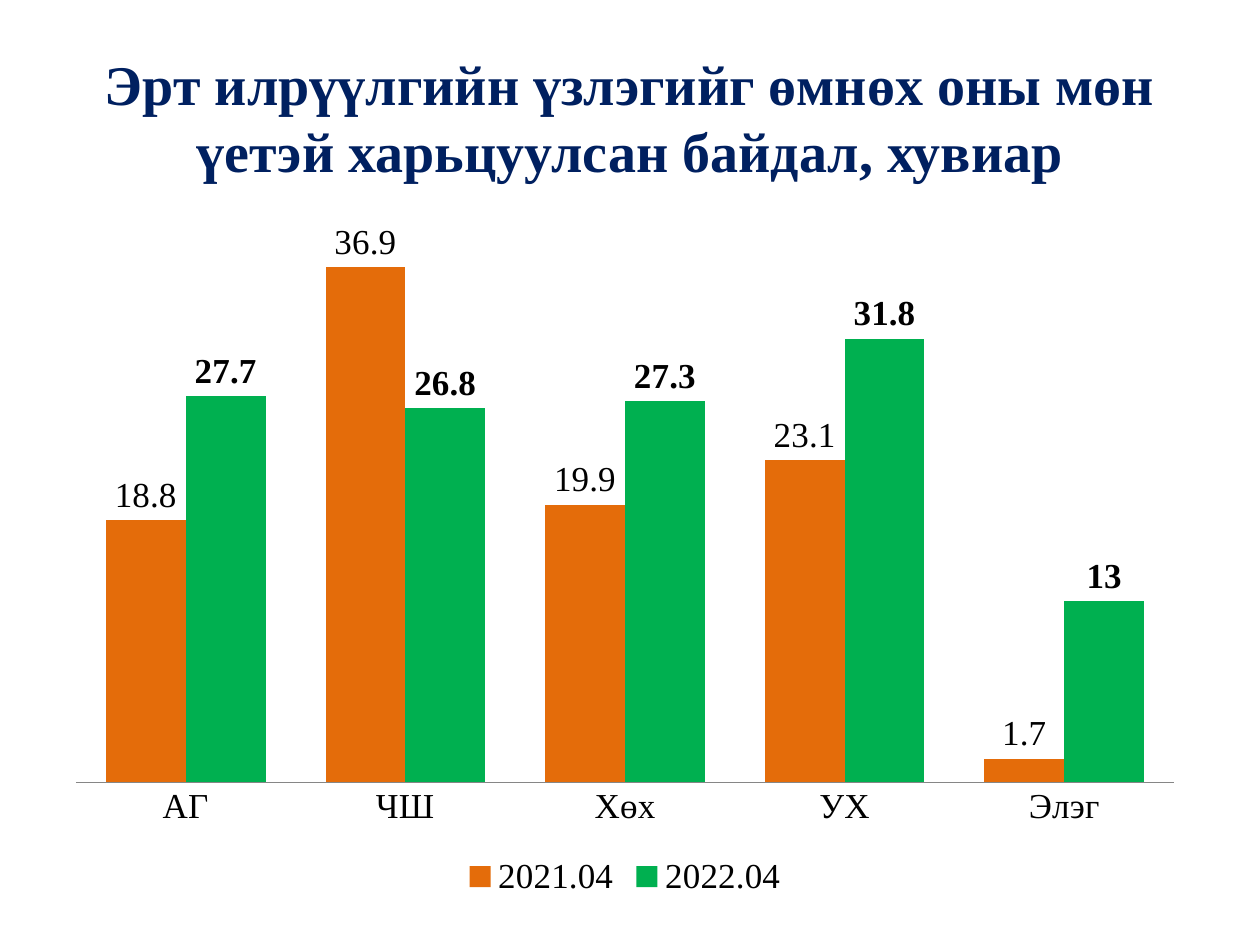
from pptx import Presentation
from pptx.chart.data import CategoryChartData
from pptx.dml.color import RGBColor
from pptx.enum.chart import XL_CHART_TYPE, XL_LABEL_POSITION, XL_LEGEND_POSITION, XL_TICK_MARK
from pptx.enum.text import MSO_ANCHOR, PP_ALIGN
from pptx.util import Cm, Pt

CLUSTERED = XL_CHART_TYPE.COLUMN_CLUSTERED
OUTSIDE_END = XL_LABEL_POSITION.OUTSIDE_END
LEGEND_BOTTOM = XL_LEGEND_POSITION.BOTTOM
NO_TICK = XL_TICK_MARK.NONE
MIDDLE = MSO_ANCHOR.MIDDLE
CENTER = PP_ALIGN.CENTER

NAVY = RGBColor(0x00, 0x20, 0x60)
BLACK = RGBColor(0x00, 0x00, 0x00)
GRAY = RGBColor(0x86, 0x86, 0x86)
ORANGE = RGBColor(0xE4, 0x6C, 0x0A)
GREEN = RGBColor(0x00, 0xB0, 0x50)

TITLE = "Эрт илрүүлгийн үзлэгийг өмнөх оны мөн үетэй харьцуулсан байдал, хувиар"
CATEGORIES = ["АГ", "ЧШ", "Хөх", "УХ", "Элэг"]
# name, values, color, bold labels
SERIES = [
    ("2021.04", [18.8, 36.9, 19.9, 23.1, 1.7], ORANGE, False),
    ("2022.04", [27.7, 26.8, 27.3, 31.8, 13], GREEN, True),
]


def set_attributes(target, values):
    for name, value in values.items():
        setattr(target, name, value)


class SlideBuilder:
    font_name = "Times New Roman"

    def __init__(self, slide):
        self.slide = slide

    def style_font(self, font, size, color, bold=False):
        set_attributes(font, {"name": self.font_name, "size": Pt(size), "bold": bold})
        font.color.rgb = color

    def add_title(self, text, left, top, width, height):
        shape = self.slide.shapes.add_textbox(Cm(left), Cm(top), Cm(width), Cm(height))
        set_attributes(shape.text_frame, {"word_wrap": True, "vertical_anchor": MIDDLE})
        paragraph = shape.text_frame.paragraphs[0]
        paragraph.alignment = CENTER
        run = paragraph.add_run()
        run.text = text
        self.style_font(run.font, 32, NAVY, bold=True)

    def add_column_chart(self, categories, series_rows, left, top, width, height):
        data = CategoryChartData()
        data.categories = categories
        for name, values, *_ in series_rows:
            data.add_series(name, values)
        chart = self.slide.shapes.add_chart(
            CLUSTERED, Cm(left), Cm(top), Cm(width), Cm(height), data).chart
        set_attributes(chart, {"has_title": False, "has_legend": True})
        self.style_font(chart.font, 20, BLACK)
        set_attributes(chart.legend, {"position": LEGEND_BOTTOM, "include_in_layout": False})
        set_attributes(chart.category_axis,
                       {"major_tick_mark": NO_TICK, "has_major_gridlines": False})
        chart.category_axis.format.line.color.rgb = GRAY
        set_attributes(chart.value_axis, {
            "visible": False, "has_major_gridlines": False,
            "minimum_scale": 0, "maximum_scale": 40})
        plot = chart.plots[0]
        set_attributes(plot, {"gap_width": 75, "overlap": 0, "vary_by_categories": False})
        for series, (_, _, color, bold) in zip(plot.series, series_rows):
            series.format.fill.solid()
            series.format.fill.fore_color.rgb = color
            set_attributes(series.data_labels, {"show_value": True, "position": OUTSIDE_END})
            self.style_font(series.data_labels.font, 20, BLACK, bold)


def main():
    presentation = Presentation()
    set_attributes(presentation, {"slide_width": Cm(25.4), "slide_height": Cm(19.05)})
    builder = SlideBuilder(presentation.slides.add_slide(presentation.slide_layouts[6]))
    builder.add_title(TITLE, 1.27, 0.76, 22.86, 3.18)
    builder.add_column_chart(CATEGORIES, SERIES, 1.07, 4.24, 23.06, 13.97)
    presentation.save("out.pptx")


if __name__ == "__main__":
    main()
